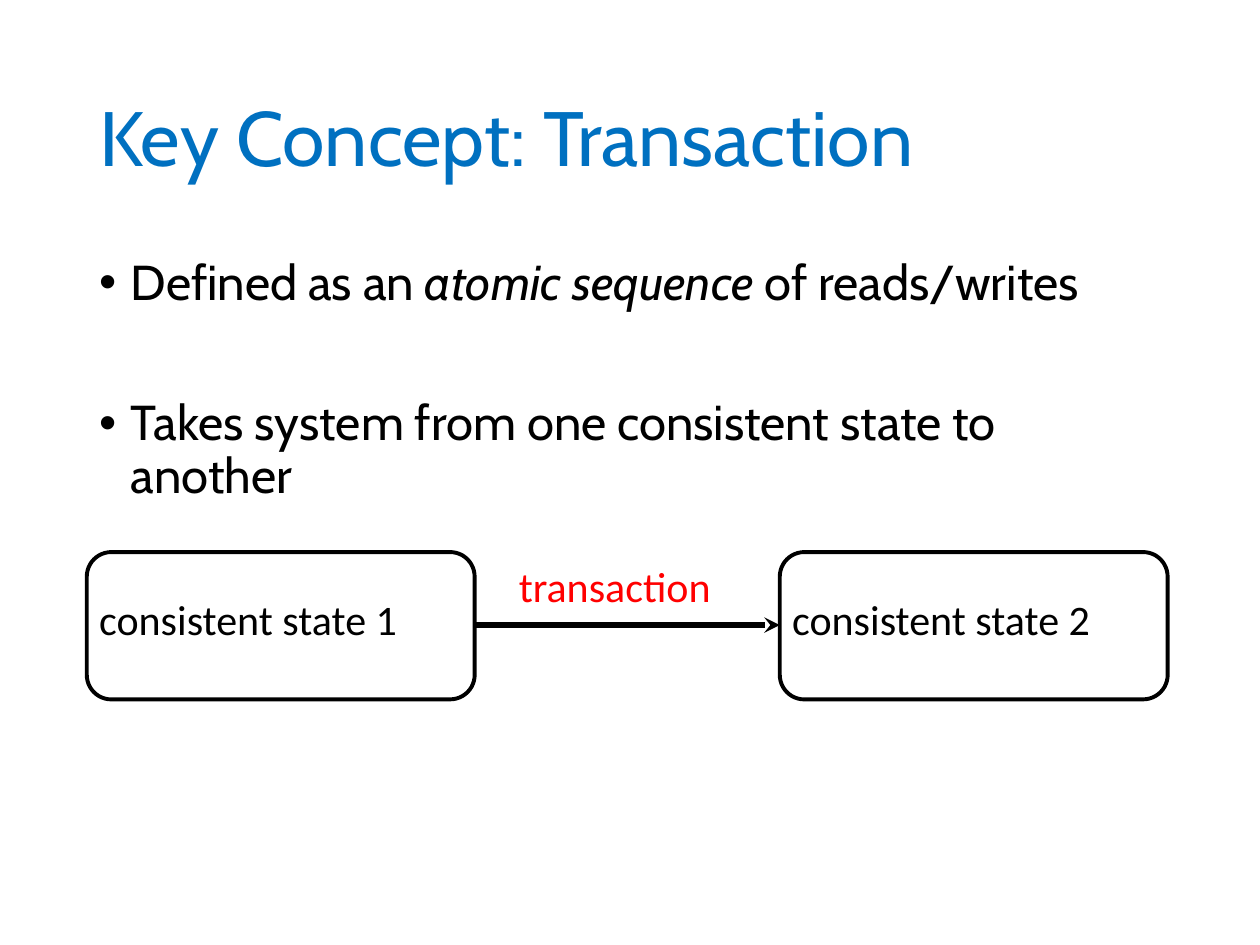
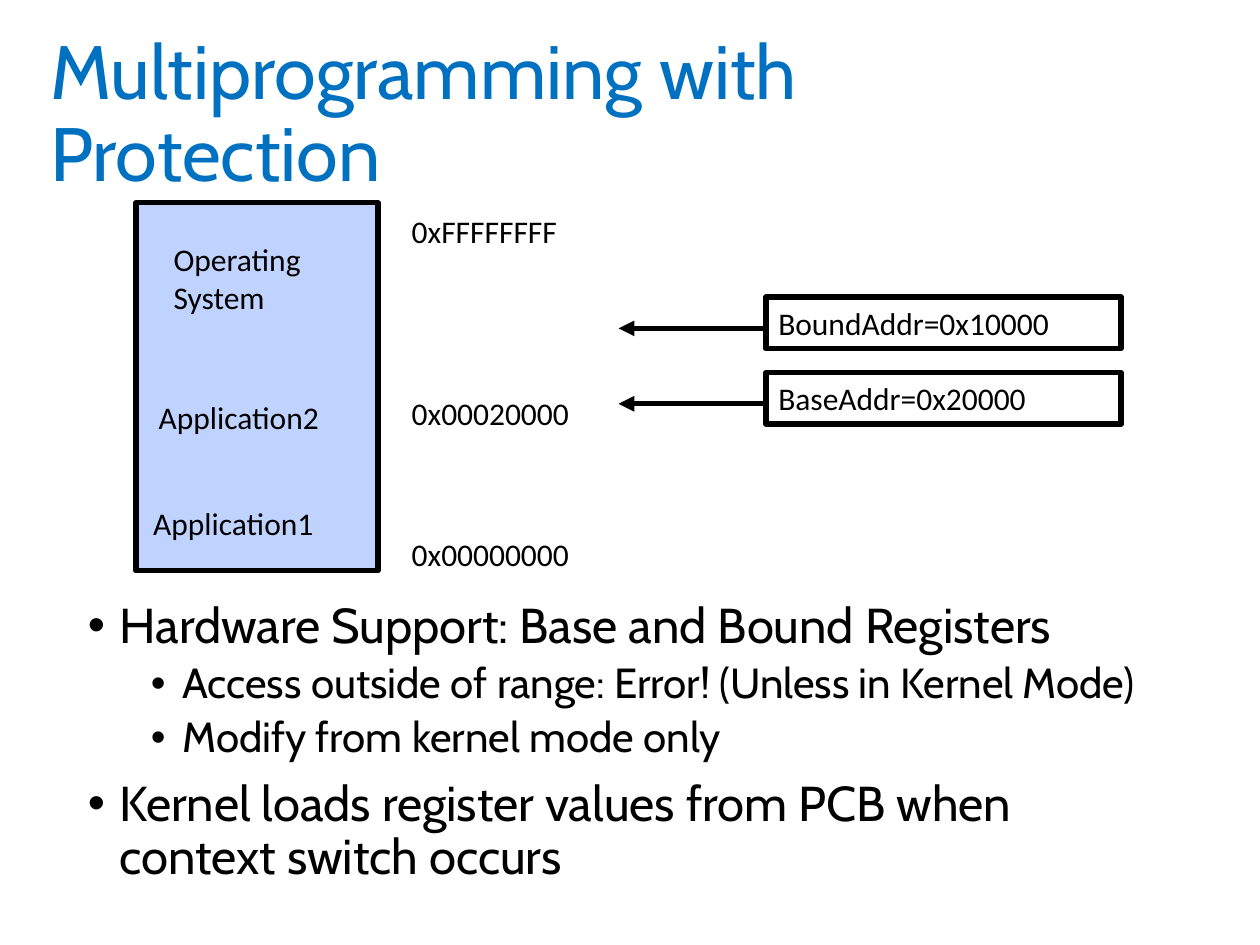
from lxml.etree import SubElement
from pptx import Presentation
from pptx.dml.color import RGBColor
from pptx.enum.shapes import MSO_CONNECTOR, MSO_SHAPE
from pptx.enum.text import MSO_ANCHOR
from pptx.oxml.ns import qn
from pptx.util import Cm, Pt

BLUE = RGBColor(0x00, 0x70, 0xC0)
BLACK = RGBColor(0x00, 0x00, 0x00)
RED = RGBColor(0xFF, 0x00, 0x00)
MEMORY_BLUE = RGBColor(0xC0, 0xD2, 0xFE)
HEADING_FONT = "Cabin"
LABEL_FONT = "Calibri"


def write_text(paragraph, text, size=18, font=LABEL_FONT, color=BLACK,
               spacing=None, before=0):
    """Fill a paragraph; text is a string or a list of (words, italic)."""
    paragraph.line_spacing = spacing
    paragraph.space_before = Pt(before)
    runs = [(text, False)] if isinstance(text, str) else text
    for words, italic in runs:
        run = paragraph.add_run()
        run.text = words
        run.font.size = Pt(size)
        run.font.name = font
        run.font.color.rgb = color
        run.font.italic = italic


class Deck:
    def __init__(self):
        self.presentation = Presentation()
        self.presentation.slide_width = Cm(25.4)
        self.presentation.slide_height = Cm(19.05)
        self.slide = None

    def new_slide(self):
        blank = self.presentation.slide_layouts[6]
        self.slide = self.presentation.slides.add_slide(blank)

    def frame(self, left, top, width, height, wrap=True):
        box = self.slide.shapes.add_textbox(Cm(left), Cm(top), Cm(width), Cm(height))
        box.text_frame.word_wrap = wrap
        return box.text_frame

    def title(self, text, left, top, width, height, size=44):
        frame = self.frame(left, top, width, height)
        frame.vertical_anchor = MSO_ANCHOR.MIDDLE
        write_text(frame.paragraphs[0], text, size=size, font=HEADING_FONT,
                   color=BLUE, spacing=0.9)

    def bullets(self, items, left, top, width, height):
        """Each item is (text, level, space before in points)."""
        frame = self.frame(left, top, width, height)
        for number, (text, level, before) in enumerate(items):
            paragraph = frame.add_paragraph() if number else frame.paragraphs[0]
            paragraph.level = level
            write_text(paragraph, text, size=28 - 4 * level, font=HEADING_FONT,
                       spacing=0.9, before=before)
            properties = paragraph._p.get_or_add_pPr()
            properties.set("marL", str(Cm(0.64 + 1.27 * level)))
            properties.set("indent", str(-Cm(0.64)))
            SubElement(properties, qn("a:buFont"), typeface="Arial")
            SubElement(properties, qn("a:buChar"), char="•")

    def label(self, lines, left, top, width, height=1.02, **style):
        frame = self.frame(left, top, width, height, wrap=False)
        for number, line in enumerate(lines.split("\n")):
            paragraph = frame.add_paragraph() if number else frame.paragraphs[0]
            write_text(paragraph, line, **style)

    def box(self, left, top, width, height, kind=MSO_SHAPE.RECTANGLE,
            fill=None, weight=3, text=None):
        shape = self.slide.shapes.add_shape(kind, Cm(left), Cm(top), Cm(width), Cm(height))
        shape.shadow.inherit = False
        if fill is None:
            shape.fill.background()
        else:
            shape.fill.solid()
            shape.fill.fore_color.rgb = fill
        shape.line.color.rgb = BLACK
        shape.line.width = Pt(weight)
        if text:
            shape.text_frame.word_wrap = True
            shape.text_frame.vertical_anchor = MSO_ANCHOR.MIDDLE
            paragraph = shape.text_frame.paragraphs[0]
            paragraph._p.get_or_add_pPr().set("algn", "l")
            write_text(paragraph, text)

    def arrow(self, start, end, y, head):
        line = self.slide.shapes.add_connector(
            MSO_CONNECTOR.STRAIGHT, Cm(start), Cm(y), Cm(end), Cm(y))
        line.line.color.rgb = BLACK
        line.line.width = Pt(3)
        SubElement(line.line._get_or_add_ln(), qn("a:tailEnd"), type=head)
        SubElement(line._element.spPr, qn("a:effectLst"))


def transaction_slide(deck):
    deck.new_slide()
    deck.title("Key Concept: Transaction", 1.75, 1.02, 21.9, 3.68)
    deck.bullets([
        ([("Defined as an ", False), ("atomic sequence", True),
          (" of reads/writes", False)], 0, 10),
        ("Takes system from one consistent state to another", 0, 50),
    ], 1.75, 5.08, 21.9, 12.09)

    # Two states joined by the transaction
    first_state, second_state, state_width = 1.75, 15.72, 7.82
    for number, left in enumerate((first_state, second_state), start=1):
        deck.box(left, 11.13, state_width, 2.97,
                 kind=MSO_SHAPE.ROUNDED_RECTANGLE, weight=2.25)
        deck.label(f"consistent state {number}", left, 11.84, 7.16, 1.27, size=24)
    deck.arrow(first_state + state_width, second_state, 12.6, "stealth")
    deck.label("transaction", 10.21, 11.18, 4.7, 1.27, size=24, color=RED)


def protection_slide(deck):
    deck.new_slide()
    deck.title("Multiprogramming with Protection", 0.76, 0.89, 21.97, 2.9, size=43.2)
    deck.bullets([
        ("Hardware Support: Base and Bound Registers", 0, 10),
        ("Access outside of range: Error! (Unless in Kernel Mode)", 1, 5),
        ("Modify from kernel mode only", 1, 5),
        ("Kernel loads register values from PCB when context switch occurs", 0, 10),
    ], 1.52, 11.99, 22.35, 6.4)

    # Memory with its contents
    deck.box(2.74, 4.09, 4.88, 7.42, fill=MEMORY_BLUE)
    deck.label("Operating\nSystem", 3.25, 4.72, 3.15, 1.78)
    deck.label("Application2", 2.95, 7.9, 3.76)
    deck.label("Application1", 2.84, 10.03, 3.76)

    # Addresses beside the memory
    for address, top in (("0xFFFFFFFF", 4.14), ("0x00020000", 7.82),
                         ("0x00000000", 10.67)):
        deck.label(address, 8.05, top, 3.71)

    # Registers pointing to the memory
    register_left = 15.44
    for row, register in enumerate(("BoundAddr=0x10000", "BaseAddr=0x20000")):
        top = 5.99 + 1.52 * row
        deck.box(register_left, top, 7.16, 1.04, text=register)
        deck.arrow(register_left, 12.47, top + 0.63, "triangle")


def main():
    deck = Deck()
    transaction_slide(deck)
    protection_slide(deck)
    deck.presentation.save("out.pptx")


if __name__ == "__main__":
    main()
